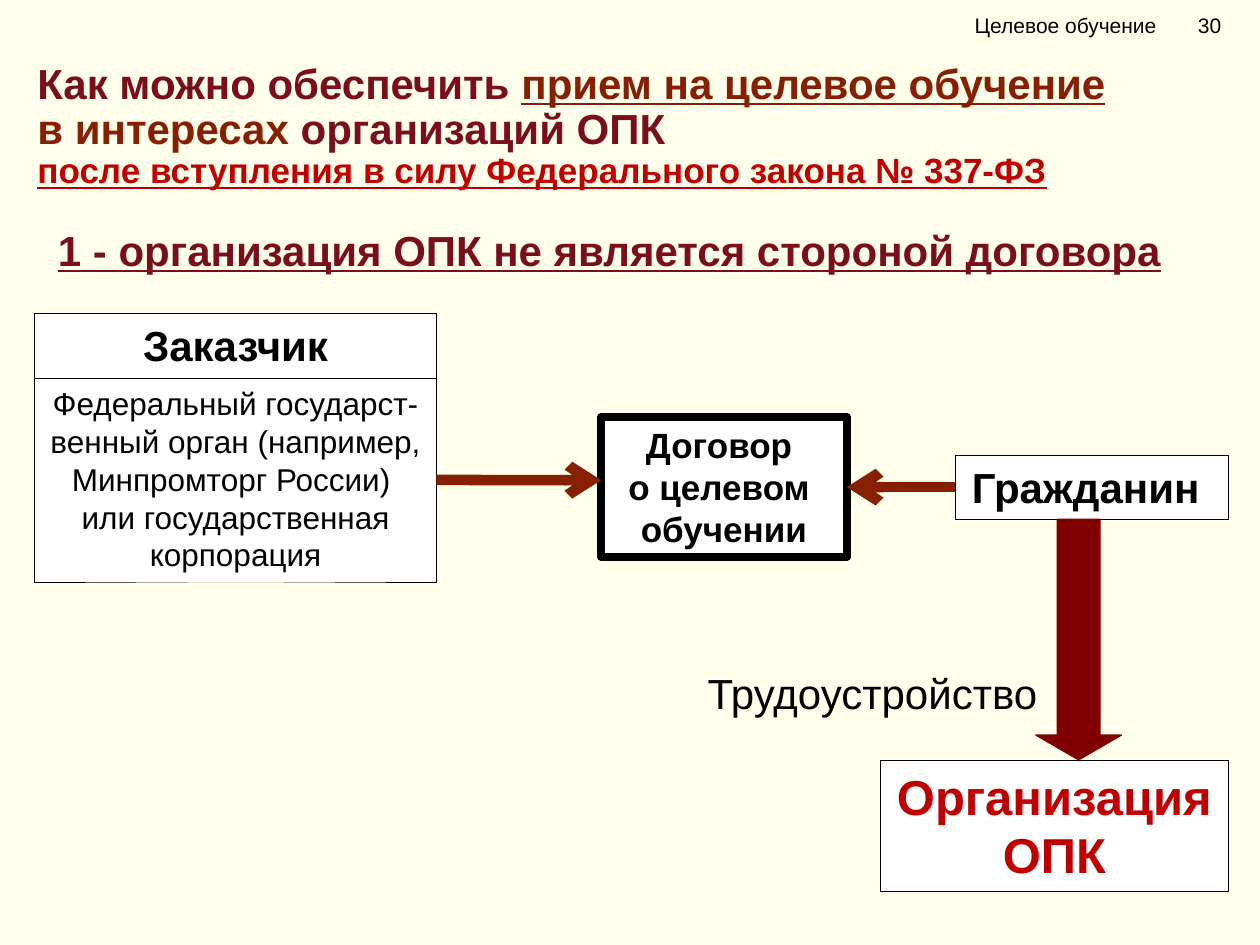
from dataclasses import dataclass

from lxml import etree
from pptx import Presentation
from pptx.dml.color import RGBColor
from pptx.enum.shapes import MSO_CONNECTOR, MSO_SHAPE
from pptx.enum.text import MSO_ANCHOR, MSO_AUTO_SIZE, PP_ALIGN
from pptx.oxml.ns import qn
from pptx.util import Cm, Pt

RECT, DOWN_ARROW = MSO_SHAPE.RECTANGLE, MSO_SHAPE.DOWN_ARROW
STRAIGHT = MSO_CONNECTOR.STRAIGHT
LEFT, CENTER, RIGHT = PP_ALIGN.LEFT, PP_ALIGN.CENTER, PP_ALIGN.RIGHT
TOP, MIDDLE = MSO_ANCHOR.TOP, MSO_ANCHOR.MIDDLE
SIDE_LEFT, SIDE_RIGHT = 1, 3


@dataclass(frozen=True)
class Theme:
    font: str = "Arial"
    background: str = "FFFFEB"
    white: str = "FFFFFF"
    black: str = "000000"
    wine: str = "7B0F19"
    brown: str = "871F03"
    red: str = "C00000"
    maroon: str = "800000"
    small: int = 12
    body: int = 18
    medium: int = 20
    large: int = 24
    huge: int = 28


THEME = Theme()


def rgb(value):
    return RGBColor.from_string(value)


def set_font(font, size, color, bold=False, underline=None):
    font.name = THEME.font
    font.size = Pt(size)
    font.bold = bold
    font.underline = underline
    font.color.rgb = rgb(color)


def place(sp, box):
    sp.left, sp.top, sp.width, sp.height = (Cm(v) for v in box)


def write(sp, lines, size, color=THEME.black, bold=False, align=CENTER,
          anchor=TOP, underline=None, spacing=None):
    """Fill a shape with one paragraph per line, all in one format."""
    tf = sp.text_frame
    tf.word_wrap = True
    tf.auto_size = MSO_AUTO_SIZE.NONE
    tf.vertical_anchor = anchor
    for i, line in enumerate(lines):
        p = tf.add_paragraph() if i else tf.paragraphs[0]
        p.text = line
        p.alignment = align
        p.line_spacing = spacing
        set_font(p.font, size, color, bold, underline)


def add_text(s, box, lines, size, **style):
    sp = s.shapes.add_textbox(*(Cm(v) for v in box))
    write(sp, lines, size, **style)
    return sp


def add_block(s, box, fill, line, width, kind=RECT):
    sp = s.shapes.add_shape(kind, *(Cm(v) for v in box))
    sp.shadow.inherit = False
    sp.fill.solid()
    sp.fill.fore_color.rgb = rgb(fill)
    sp.line.color.rgb = rgb(line)
    sp.line.width = Pt(width)
    return sp


def add_card(s, box, lines, size, border=0.25, **style):
    sp = add_block(s, box, THEME.white, THEME.black, border)
    write(sp, lines, size, **style)
    return sp


def add_arrow(s, start, end):
    cx = s.shapes.add_connector(STRAIGHT, *(Cm(v) for v in start + end))
    cx.line.color.rgb = rgb(THEME.brown)
    cx.line.width = Pt(6)
    etree.SubElement(cx.line._get_or_add_ln(), qn("a:tailEnd"), type="arrow")
    etree.SubElement(cx._element.spPr, qn("a:effectLst"))
    return cx


def add_header(s, box):
    """Section name and page number, set apart by a tab stop."""
    sp = add_text(s, box, ["Целевое обучение\t30"], THEME.small,
                  align=LEFT, anchor=MIDDLE)
    sp.text_frame.margin_left = Cm(0.75)
    pPr = sp.text_frame.paragraphs[0]._p.get_or_add_pPr()
    tabs = etree.Element(qn("a:tabLst"))
    etree.SubElement(tabs, qn("a:tab"), pos=str(Cm(4.5)), algn="l")
    pPr.find(qn("a:defRPr")).addprevious(tabs)


def fill_title(s, box):
    t = THEME
    lines = [
        [("Как можно обеспечить ", t.large, t.wine, False),
         ("прием на целевое обучение", t.large, t.brown, True)],
        [("в интересах ", t.large, t.brown, False),
         ("организаций ОПК", t.large, t.wine, False)],
        [("после вступления в силу Федерального закона № 337-ФЗ",
          t.medium, t.red, True)],
    ]
    title = s.shapes.title
    place(title, box)
    tf = title.text_frame
    tf.word_wrap = True
    tf.auto_size = MSO_AUTO_SIZE.NONE
    tf.vertical_anchor = TOP
    for i, runs in enumerate(lines):
        p = tf.add_paragraph() if i else tf.paragraphs[0]
        p.alignment = LEFT
        p.line_spacing = 0.9
        for text, size, color, underline in runs:
            r = p.add_run()
            r.text = text
            set_font(r.font, size, color, True, underline)


def add_scheme(s, left, top):
    """Customer and citizen sign the contract; the citizen joins the organisation."""
    t = THEME

    def at(x, y, *size):
        return (left + x, top + y, *size)

    add_card(s, at(0, 0, 8.1, 1.3), ["Заказчик"], t.large, bold=True)
    customer = add_card(
        s, at(0, 1.3, 8.1, 4.11),
        ["Федеральный государст-венный орган (например, Минпромторг России) ",
         "или государственная корпорация"], t.body)
    contract = add_card(s, at(11.42, 2.09, 4.95, 2.82),
                        ["Договор ", "о целевом ", "обучении"],
                        t.medium, border=4.5, bold=True)
    citizen = add_card(s, at(18.55, 2.85, 5.51, 1.3), ["Гражданин "],
                       t.large, bold=True)

    cx = add_arrow(s, at(8.1, 3.36), at(11.42, 3.36))
    cx.begin_connect(customer, SIDE_RIGHT)
    cx = add_arrow(s, at(18.55, 3.5), at(16.37, 3.5))
    cx.begin_connect(citizen, SIDE_LEFT)
    cx.end_connect(contract, SIDE_RIGHT)

    hiring = add_block(s, at(20.18, 4.15, 1.73, 4.85), t.maroon, t.maroon,
                       0.75, DOWN_ARROW)
    hiring.adjustments[0] = 0.5
    hiring.adjustments[1] = 0.29
    add_text(s, at(12.79, 7.02, 7.67, 1.3), ["Трудоустройство"], t.large,
             align=RIGHT)
    add_card(s, at(17.05, 9, 7.01, 2.64), ["Организация ОПК"], t.huge,
             color=t.red, bold=True)


def main():
    prs = Presentation()
    prs.slide_width, prs.slide_height = Cm(25.4), Cm(19.05)
    s = prs.slides.add_slide(prs.slide_layouts[5])
    s.background.fill.solid()
    s.background.fill.fore_color.rgb = rgb(THEME.background)

    fill_title(s, (0.5, 1.14, 23.9, 2.9))
    add_header(s, (18.9, 0, 6.5, 1.02))
    add_text(s, (0.92, 4.52, 23.9, 1.2),
             ["1 - организация ОПК не является стороной договора"],
             THEME.large, color=THEME.wine, bold=True, underline=True,
             align=LEFT, spacing=0.9)
    add_scheme(s, 0.7, 6.32)
    prs.save("out.pptx")


if __name__ == "__main__":
    main()
